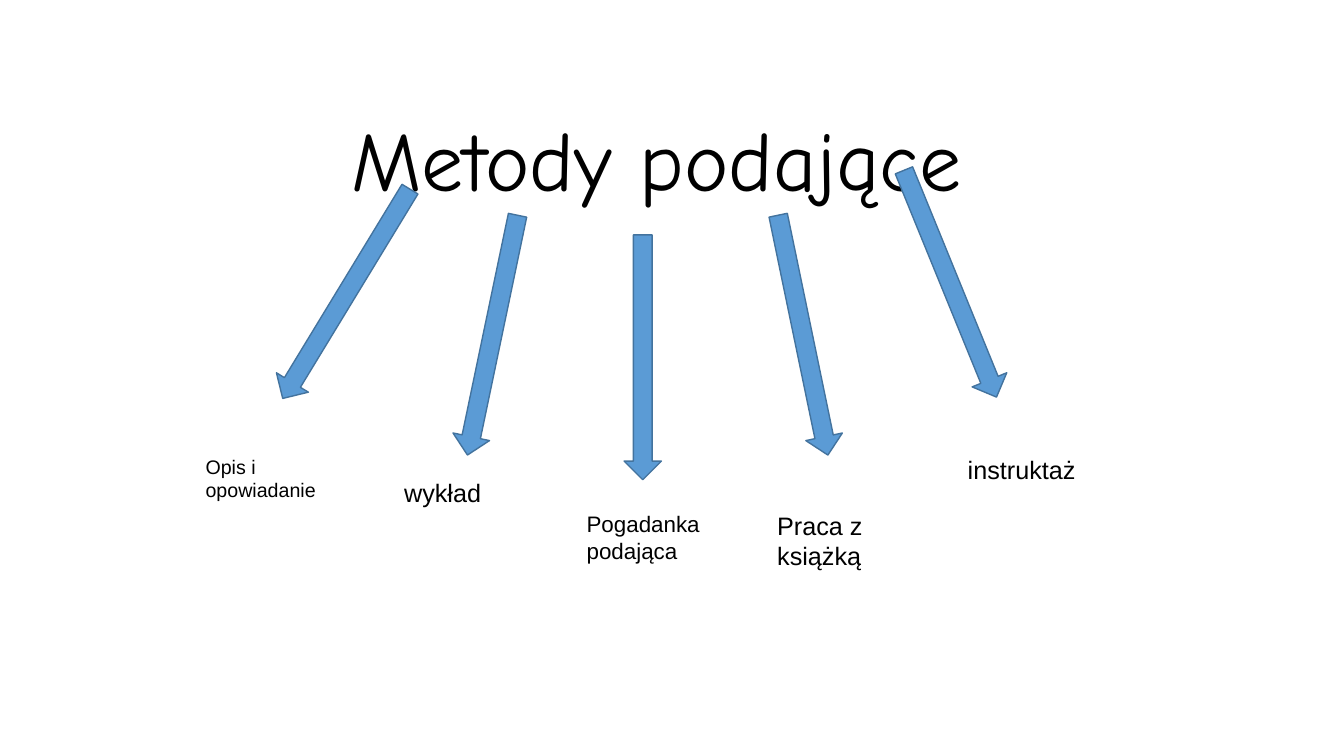
import pptx
import pptx.util
import pptx.dml.color
import pptx.enum.shapes
import pptx.enum.text

PX = 9144
ARROW_WIDTH, ARROW_LENGTH = 37, 243

METHODS = [
    ("Opis i opowiadanie", 14, (194, 446, 181, 57), (325, 170), 31.3),
    ("wykład", 18, (391, 469, 158, 40), (470, 211), 11.8),
    ("Pogadanka podająca", 16, (572, 501, 134, 64), (619, 233), 0),
    ("Praca z książką", 18, (761, 501, 165, 71), (778, 211), 348.3),
    ("instruktaż", 18, (950, 446, 150, 40), (924, 160), 337.8),
]


def px(*lengths):
    return [pptx.util.Emu(length * PX) for length in lengths]


def color(value):
    return pptx.dml.color.RGBColor.from_string(value)


def add_text(page, text, box, size, font="Arial", align="LEFT", anchor="TOP",
             spacing=1.0, fill="000000"):
    frame = page.shapes.add_textbox(*px(*box)).text_frame
    frame.word_wrap = True
    frame.vertical_anchor = getattr(pptx.enum.text.MSO_ANCHOR, anchor)
    para = frame.paragraphs[0]
    para.alignment = getattr(pptx.enum.text.PP_ALIGN, align)
    para.line_spacing = spacing
    span = para.add_run()
    span.text = text
    span.font.name = font
    span.font.size = pptx.util.Pt(size)
    span.font.color.rgb = color(fill)


def add_title(page, box):
    add_text(page, "Metody podające", box, 60, font="Comic Neue",
             align="CENTER", anchor="BOTTOM", spacing=0.9)


def add_arrow(page, box, rotation):
    arrow = page.shapes.add_shape(
        pptx.enum.shapes.MSO_SHAPE.DOWN_ARROW, *px(*box))
    arrow.rotation = rotation
    arrow.shadow.inherit = False
    arrow.fill.solid()
    arrow.fill.fore_color.rgb = color("5B9BD5")
    arrow.line.color.rgb = color("43739E")
    arrow.line.width = pptx.util.Pt(1)


def add_methods(page, methods):
    for text, size, box, corner, rotation in methods:
        add_arrow(page, (*corner, ARROW_WIDTH, ARROW_LENGTH), rotation)
        add_text(page, text, box, size)


def main():
    deck = pptx.Presentation()
    deck.slide_width, deck.slide_height = px(1333, 750)
    page = deck.slides.add_slide(deck.slide_layouts[6])
    add_title(page, (226, 52, 850, 161))
    add_methods(page, METHODS)
    deck.save("out.pptx")


if __name__ == "__main__":
    main()
